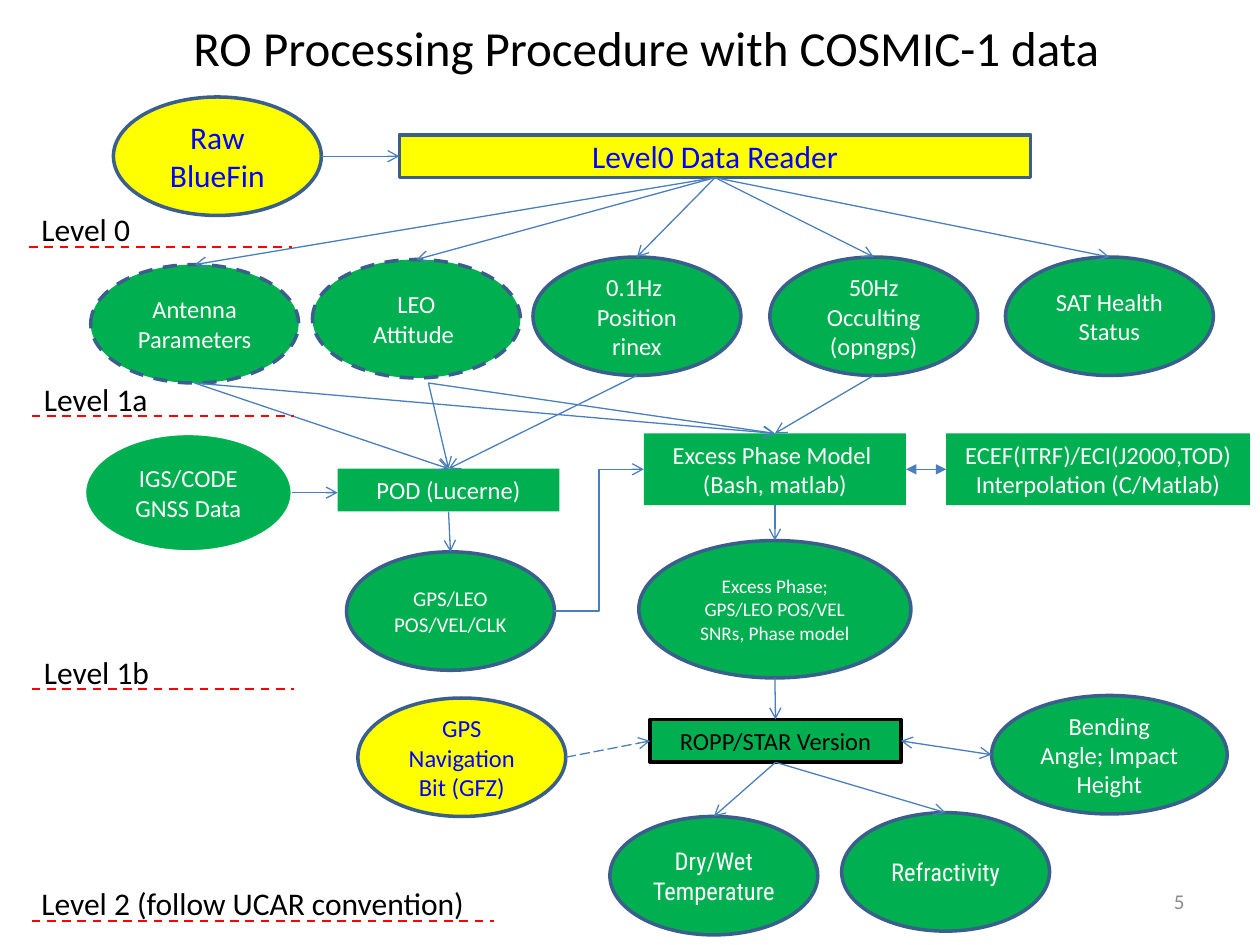
from lxml import etree
from pptx import Presentation
from pptx.dml.color import RGBColor
from pptx.enum.dml import MSO_LINE_DASH_STYLE as Dash
from pptx.enum.shapes import MSO_CONNECTOR_TYPE as Link, MSO_SHAPE as Shape
from pptx.enum.text import MSO_ANCHOR as Anchor, PP_ALIGN as Align
from pptx.oxml.ns import qn
from pptx.util import Emu, Pt

PX = 9144  # 100 px to the inch
GREEN, YELLOW, WHITE, BLACK = "00B050", "FFFF00", "FFFFFF", "000000"
BLUE_TEXT, EDGE, ARROW, RED = "0000FF", "3A5F8C", "4B7EBC", "FF0000"
TOP, LEFT, BOTTOM, RIGHT = range(4)


def color(code):
    return RGBColor.from_string(code)


def write(box, lines, size, ink, align=Align.CENTER, font="Calibri"):
    frame = box.text_frame
    frame.word_wrap = True
    frame.vertical_anchor = Anchor.MIDDLE
    for i, line in enumerate(lines):
        para = frame.add_paragraph() if i else frame.paragraphs[0]
        para.alignment = align
        span = para.add_run()
        span.text = line
        span.font.name = font
        span.font.size = Pt(size)
        span.font.color.rgb = color(ink)


deck = Presentation()
deck.slide_width, deck.slide_height = Emu(1000 * PX), Emu(750 * PX)
page = deck.slides.add_slide(deck.slide_layouts[6])

# Title, level labels and page number
texts = [
    (63, 8, 900, 58, "RO Processing Procedure with COSMIC-1 data", 28, BLACK, Align.CENTER),
    (23, 162, 118, 40, "Level 0", 18, BLACK, Align.LEFT),
    (25, 297, 118, 40, "Level 1a", 18, BLACK, Align.LEFT),
    (25, 513, 118, 40, "Level 1b", 18, BLACK, Align.LEFT),
    (23, 697, 399, 40, "Level 2 (follow UCAR convention)", 18, BLACK, Align.LEFT),
    (717, 695, 233, 40, "5", 12, "8C8C8C", Align.RIGHT),
]
for x, y, w, h, text, size, ink, align in texts:
    box = page.shapes.add_textbox(x * PX, y * PX, w * PX, h * PX)
    write(box, [text], size, ink, align)

# Data products: name, left, top, width, height, lines, size, fill, edge
OVAL_W, OVAL_H = 165, 94
ovals = [
    ("raw", 90, 77, OVAL_W, OVAL_H, ["Raw BlueFin"], 18, YELLOW, EDGE),
    ("position", 423, 204, OVAL_W, OVAL_H, ["0.1Hz ", "Position", "rinex"], 14, GREEN, EDGE),
    ("occulting", 611, 204, OVAL_W, OVAL_H, ["50Hz", "Occulting (opngps)"], 14, GREEN, EDGE),
    ("health", 798, 204, OVAL_W, OVAL_H, ["SAT Health Status"], 14, GREEN, EDGE),
    ("attitude", 248, 206, OVAL_W, OVAL_H, ["LEO Attitude "], 14, GREEN, EDGE),
    ("antenna", 72, 210, OVAL_W, OVAL_H, ["Antenna", "Parameters"], 14, GREEN, EDGE),
    ("gnss", 67, 344, OVAL_W, OVAL_H, ["IGS/CODE GNSS Data"], 14, GREEN, WHITE),
    ("orbit", 275, 438, OVAL_W, OVAL_H, ["GPS/LEO POS/VEL/CLK"], 12, GREEN, EDGE),
    ("navigation", 284, 554, OVAL_W, OVAL_H, ["GPS Navigation Bit (GFZ)"], 14, YELLOW, EDGE),
    ("phase", 507, 429, 216, 109, ["Excess Phase; GPS/LEO POS/VEL", "SNRs, Phase model"], 11, GREEN, EDGE),
    ("bending", 787, 552, 187, OVAL_H, ["Bending Angle; Impact Height"], 14, GREEN, EDGE),
    ("temperature", 484, 648, OVAL_W, OVAL_H, ["Dry/Wet Temperature"], 14, GREEN, EDGE),
    ("refractivity", 668, 645, OVAL_W, OVAL_H, ["Refractivity"], 14, GREEN, EDGE),
]
# Processing steps, same columns
steps = [
    ("reader", 317, 107, 501, 34, ["Level0 Data Reader"], 18, YELLOW, EDGE),
    ("pod", 268, 372, 176, 34, ["POD (Lucerne)"], 14, GREEN, None),
    ("model", 511, 344, 208, 57, ["Excess Phase Model ", "(Bash, matlab)"], 14, GREEN, None),
    ("frames", 751, 344, 241, 57, ["ECEF(ITRF)/ECI(J2000,TOD)", "Interpolation (C/Matlab)"], 14, GREEN, None),
    ("ropp", 516, 571, 199, 34, ["ROPP/STAR Version"], 14, GREEN, BLACK),
]
nodes = {}
for kind, group in ((Shape.OVAL, ovals), (Shape.RECTANGLE, steps)):
    for name, x, y, w, h, lines, size, fill, edge in group:
        node = page.shapes.add_shape(kind, x * PX, y * PX, w * PX, h * PX)
        node.shadow.inherit = False
        node.fill.solid()
        node.fill.fore_color.rgb = color(fill)
        if edge:
            node.line.color.rgb = color(edge)
            node.line.width = Pt(2)
        else:
            node.line.fill.background()
        if name in ("attitude", "antenna"):
            node.line.dash_style = Dash.DASH
        ink = BLUE_TEXT if fill == YELLOW else BLACK if name == "ropp" else WHITE
        font = "Roboto Condensed" if name in ("temperature", "refractivity") else "Calibri"
        write(node, lines, size, ink, font=font)
        nodes[name] = node

# Flow arrows: start, side, end, side; a pair of numbers is a free point
flows = [("reader", BOTTOM, name, TOP)
         for name in ("antenna", "attitude", "position", "occulting", "health")]
flows += [
    ("raw", RIGHT, "reader", LEFT),
    ("antenna", BOTTOM, "pod", TOP),
    ("antenna", BOTTOM, "model", TOP),
    ((340, 304), None, "pod", TOP),
    ((340, 304), None, "model", TOP),
    ("position", BOTTOM, "pod", TOP),
    ("occulting", BOTTOM, "model", TOP),
    ("gnss", RIGHT, (268, 391), None),
    ("pod", BOTTOM, "orbit", TOP),
    ("orbit", RIGHT, "model", LEFT),
    ("model", RIGHT, "frames", LEFT),
    ("model", BOTTOM, "phase", TOP),
    ("phase", BOTTOM, "ropp", TOP),
    ("navigation", RIGHT, "ropp", LEFT),
    ("ropp", RIGHT, "bending", LEFT),
    ("ropp", BOTTOM, "temperature", TOP),
    ("ropp", BOTTOM, "refractivity", TOP),
]
step_names = [step[0] for step in steps]
side_shares = {TOP: (0.5, 0), LEFT: (0, 0.5), BOTTOM: (0.5, 1), RIGHT: (1, 0.5)}
for start, start_side, end, end_side in flows:
    points = []
    for place, side in ((start, start_side), (end, end_side)):
        if side is None:
            points += [place[0] * PX, place[1] * PX]
        else:
            node, (across, down) = nodes[place], side_shares[side]
            points += [int(node.left + across * node.width), int(node.top + down * node.height)]
    kind = Link.ELBOW if start == "orbit" else Link.STRAIGHT
    arrow = page.shapes.add_connector(kind, *points)
    if start in step_names:
        arrow.begin_connect(nodes[start], start_side)
    if end in step_names:
        arrow.end_connect(nodes[end], end_side)
    arrow.line.color.rgb = color(ARROW)
    arrow.line.width = Pt(0.75)
    if start == "navigation":
        arrow.line.dash_style = Dash.LONG_DASH
    head = "triangle" if end == "frames" else "arrow"
    tags = ["a:headEnd", "a:tailEnd"] if end in ("frames", "bending") else ["a:tailEnd"]
    outline = arrow._element.spPr.find(qn("a:ln"))
    for tag in tags:
        etree.SubElement(outline, qn(tag), type=head)
    etree.SubElement(arrow._element.spPr, qn("a:effectLst"))

# Level separators
for x1, x2, y in ((23, 232, 196), (25, 233, 330), (25, 233, 547), (25, 392, 731)):
    rule = page.shapes.add_connector(Link.STRAIGHT, x1 * PX, y * PX, x2 * PX, y * PX)
    rule.line.color.rgb = color(RED)
    rule.line.width = Pt(1.25)
    rule.line.dash_style = Dash.DASH
    etree.SubElement(rule._element.spPr, qn("a:effectLst"))

deck.save("out.pptx")
